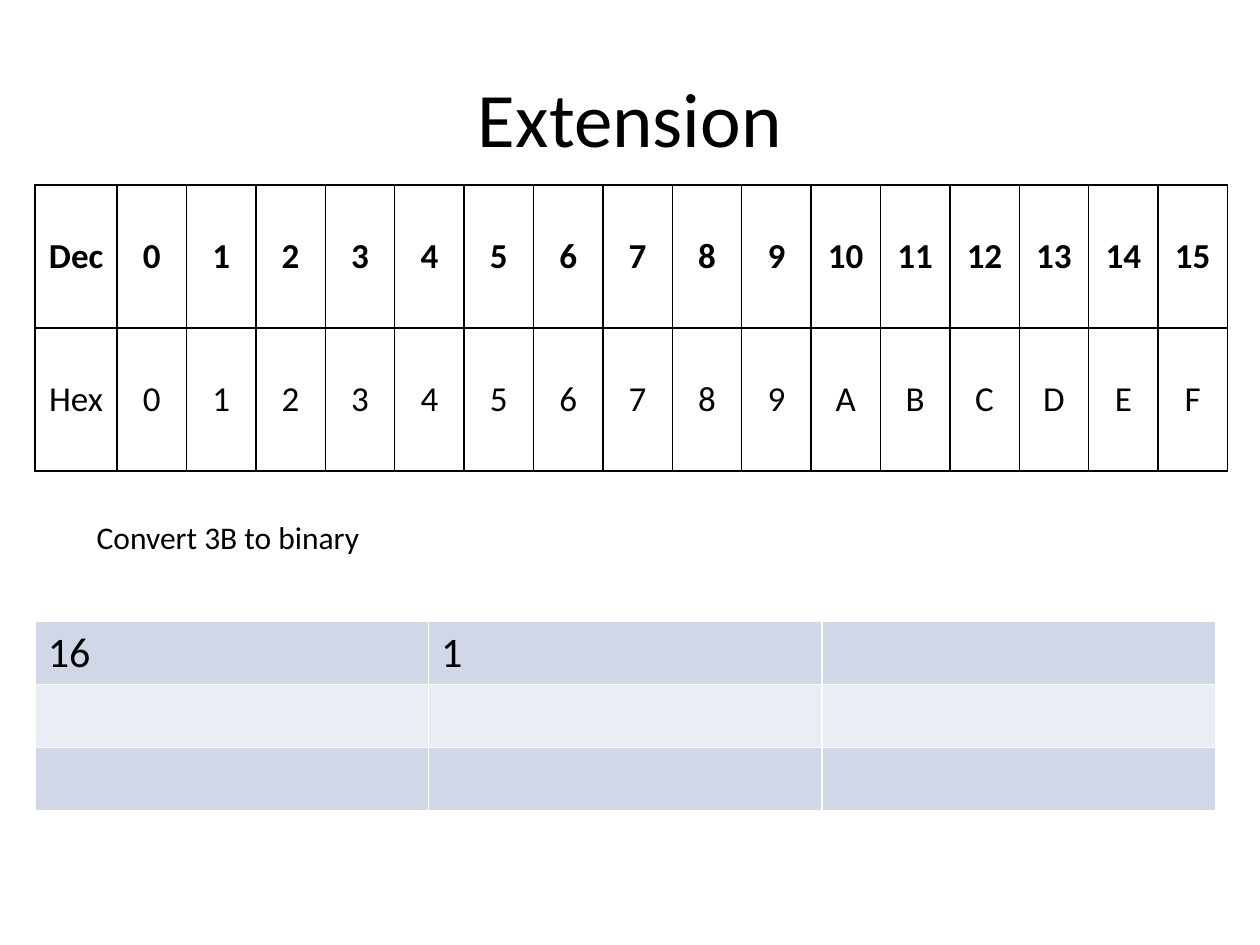
"""Build the Extension slide with a decimal to hex table and an answer grid."""
from lxml.etree import SubElement
from pptx import Presentation
from pptx.dml.color import RGBColor
from pptx.enum.text import MSO_ANCHOR, PP_ALIGN
from pptx.oxml.ns import qn
from pptx.util import Cm, Pt

BLACK = RGBColor(0x00, 0x00, 0x00)
WHITE = RGBColor(0xFF, 0xFF, 0xFF)
BAND_DARK = RGBColor(0xD0, 0xD8, 0xE8)
BAND_LIGHT = RGBColor(0xE9, 0xED, 0xF4)

TEXTS = [
    {"text": "Extension", "box": (1.27, 0.76, 22.86, 3.18),
     "font": {"size": Pt(44)}, "align": PP_ALIGN.CENTER, "anchor": MSO_ANCHOR.MIDDLE},
    {"text": "Convert 3B to binary", "box": (1.7, 10.31, 21.41, 1.03),
     "font": {"size": Pt(18)}, "align": PP_ALIGN.LEFT, "anchor": MSO_ANCHOR.TOP},
]
TABLES = [
    {"rows": [["Dec", *map(str, range(16))], ["Hex", *"0123456789ABCDEF"]],
     "at": (0.71, 3.73), "widths": [1.65] + [1.4] * 16, "height": 2.88,
     "fills": [WHITE, WHITE], "border": BLACK,
     "fonts": [{"size": Pt(20), "bold": True}, {"size": Pt(20), "bold": False}],
     "align": PP_ALIGN.CENTER, "anchor": MSO_ANCHOR.MIDDLE},
    {"rows": [["16", "1", ""], [""] * 3, [""] * 3],
     "at": (0.71, 12.53), "widths": [7.93] * 3, "height": 1.27,
     "fills": [BAND_DARK, BAND_LIGHT, BAND_DARK], "border": WHITE,
     "fonts": [{"size": Pt(24)}] * 3,
     "align": PP_ALIGN.LEFT, "anchor": MSO_ANCHOR.TOP},
]


def write(tf, text, font, align):
    p = tf.paragraphs[0]
    p.alignment = align
    target = p.font
    if text:
        r = p.add_run()
        r.text = text
        target = r.font
    for name, value in {"name": "Calibri", **font}.items():
        setattr(target, name, value)
    target.color.rgb = BLACK


def set_borders(cell, color):
    tcPr = cell._tc.get_or_add_tcPr()
    for side in ("lnL", "lnR", "lnT", "lnB"):
        ln = SubElement(tcPr, qn(f"a:{side}"), w=str(Pt(1)))
        fill = SubElement(ln, qn("a:solidFill"))
        SubElement(fill, qn("a:srgbClr"), val=str(color))


def add_text(slide, item):
    tf = slide.shapes.add_textbox(*map(Cm, item["box"])).text_frame
    tf.word_wrap = True
    tf.vertical_anchor = item["anchor"]
    write(tf, item["text"], item["font"], item["align"])


def add_grid(slide, item):
    rows, widths, height = item["rows"], item["widths"], item["height"]
    size = (sum(widths), height * len(rows))
    table = slide.shapes.add_table(
        len(rows), len(widths), *map(Cm, item["at"] + size)).table
    for column, width in zip(table.columns, widths):
        column.width = Cm(width)
    for row, texts, fill, font in zip(table.rows, rows, item["fills"], item["fonts"]):
        row.height = Cm(height)
        for cell, text in zip(row.cells, texts):
            set_borders(cell, item["border"])
            cell.fill.solid()
            cell.fill.fore_color.rgb = fill
            cell.vertical_anchor = item["anchor"]
            write(cell.text_frame, text, font, item["align"])


def main():
    prs = Presentation()
    prs.slide_width, prs.slide_height = Cm(25.4), Cm(19.05)
    slide = prs.slides.add_slide(prs.slide_layouts[6])
    for item in TEXTS:
        add_text(slide, item)
    for item in TABLES:
        add_grid(slide, item)
    prs.save("out.pptx")


if __name__ == "__main__":
    main()
